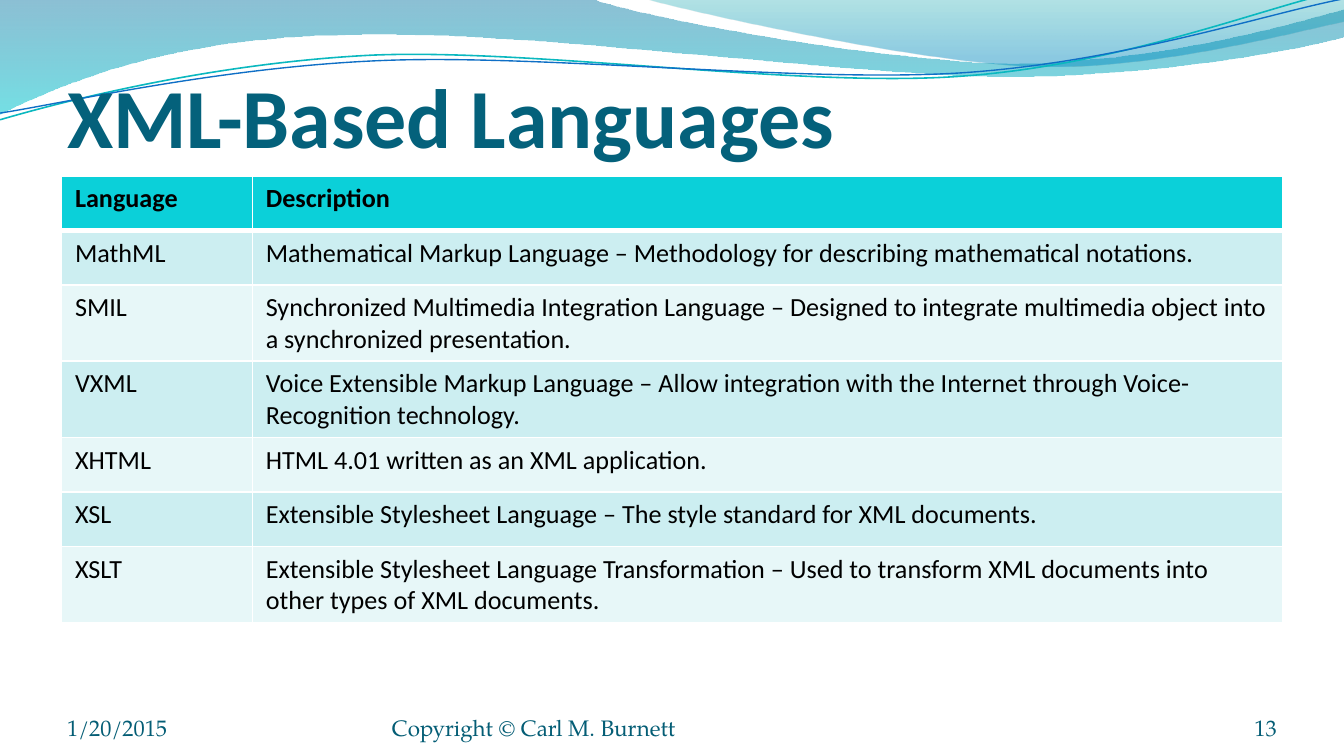
from lxml import etree
from pptx import Presentation
from pptx.dml import color
from pptx.enum import text
from pptx.oxml import ns
from pptx.util import Pt

RGB = color.RGBColor
WHITE = RGB(0xFF, 0xFF, 0xFF)
BLACK = RGB(0, 0, 0)
TITLE_TEAL = RGB(0x04, 0x61, 0x7B)
FOOTER_TEAL = RGB(0x04, 0x5D, 0x75)
HEADER_CYAN = RGB(0x0B, 0xD0, 0xD9)
ROW_FILLS = (RGB(0xCC, 0xEE, 0xF1), RGB(0xE7, 0xF7, 0xF8))
LINE_CYAN = RGB(0x0A, 0xB8, 0xBF)
LINE_BLUE = RGB(0x0F, 0x6F, 0xC6)

# Waves: a start point, then segments of one point (line) or three (Bezier curve)
# Gradient stops run from top to bottom: position, colour, opacity in percent
BANDS = [
    ([(0, 0), [(316.8, -0.7)],
      [(342.7, 9.4), (478.1, 33.8), (545.8, 33.8)],
      [(614.2, 33.8), (689.8, 13.7), (720, 5)],
      [(720.7, 19.4)],
      [(707.8, 23.8), (626.4, 41), (537.1, 41)],
      [(447.8, 40.3), (275, 15.1), (185, 18.7)],
      [(92.9, 19.4), (33.1, 44.6), (-0.7, 61.2)],
      [(0, 0)]],
     [(0, RGB(0x00, 0x74, 0xA1), 45), (1, RGB(0x00, 0xC6, 0xCF), 55)]),
    ([(344.9, -0.7),
      [(366.5, 5.8), (491, 33.1), (553.7, 35.3)],
      [(616.3, 37.4), (691.9, 17.3), (720, 11.5)],
      [(720, 0)],
      [(344.9, -0.7)]],
     [(0, RGB(0x00, 0xA1, 0xA9), 30), (0.8, RGB(0x00, 0x8B, 0xBF), 45)]),
]
LINE_ROTATION = 357.3
WAVE_LINES = [
    ([(-1.1, 47.2),
      [(33.9, 38.7), (114, 22.2), (199.7, 22)],
      [(285.5, 22.4), (425.4, 50), (511.9, 48.2)],
      [(599.3, 46.6), (677.1, 19.2), (719.9, 11.9)]], LINE_CYAN, 0.85),
    ([(-0.9, 43.6),
      [(33.1, 40), (118.2, 24.6), (204, 25.1)],
      [(290.5, 25.5), (429.1, 47.9), (515.7, 46.3)],
      [(601.6, 44.5), (679.8, 22.2), (721.1, 16.3)]], LINE_BLUE, 0.75),
]

LANGUAGES = [
    ("Language", "Description"),
    ("MathML", "Mathematical Markup Language – Methodology for describing "
               "mathematical notations."),
    ("SMIL", "Synchronized Multimedia Integration Language – Designed to "
             "integrate multimedia object into a synchronized presentation."),
    ("VXML", "Voice Extensible Markup Language – Allow integration with the "
             "Internet through Voice-Recognition technology."),
    ("XHTML", "HTML 4.01 written as an XML application."),
    ("XSL", "Extensible Stylesheet Language – The style standard for XML documents."),
    ("XSLT", "Extensible Stylesheet Language Transformation – Used to transform "
             "XML documents into other types of XML documents."),
]
COLUMN_WIDTHS = (102.2, 552)
ROW_HEIGHT = 29.2
TABLE_HEIGHT = 239.4


def add_wave(page, outline, close):
    start, *segments = outline
    corners = [(Pt(x), Pt(y)) for segment in segments for x, y in segment]
    builder = page.shapes.build_freeform(Pt(start[0]), Pt(start[1]))
    builder.add_line_segments(corners, close=close)
    wave = builder.convert_to_shape()
    wave.shadow.inherit = False
    # Turn each run of three points into one Bezier curve
    steps = iter(list(wave._element.iter(ns.qn("a:lnTo"))))
    for segment in segments:
        first, *others = [next(steps) for _ in segment]
        if others:
            first.tag = ns.qn("a:cubicBezTo")
        for step in others:
            first.append(step[0])
            step.getparent().remove(step)
    return wave


def add_band(page, outline, stops):
    band = add_wave(page, outline, True)
    band.line.fill.background()
    band.fill.gradient()
    band.fill.gradient_angle = 270
    for stop, (position, rgb, _) in zip(band.fill.gradient_stops, stops):
        stop.position = position
        stop.color.rgb = rgb
    tints = band._element.spPr.iter(ns.qn("a:srgbClr"))
    for tint, (_, _, opacity) in zip(tints, stops):
        etree.SubElement(tint, ns.qn("a:alpha"), val=str(opacity * 1000))


def add_wave_line(page, outline, rgb, width):
    wave = add_wave(page, outline, False)
    wave.rotation = LINE_ROTATION
    wave.fill.background()
    wave.line.color.rgb = rgb
    wave.line.width = Pt(width)


def format_text(frame, size, font, rgb, bold=False):
    for para in frame.paragraphs:
        for span in para.runs:
            span.font.size = Pt(size)
            span.font.name = font
            span.font.bold = bold
            span.font.color.rgb = rgb


def add_text(page, words, place, size, font, rgb, bold=False, top_inset=0,
             align=text.PP_ALIGN.LEFT):
    box = page.shapes.add_textbox(*map(Pt, place))
    frame = box.text_frame
    frame.word_wrap = True
    frame.vertical_anchor = text.MSO_ANCHOR.BOTTOM
    frame.margin_left = frame.margin_right = frame.margin_bottom = 0
    frame.margin_top = Pt(top_inset)
    frame.text = words
    frame.paragraphs[0].alignment = align
    format_text(frame, size, font, rgb, bold)


def set_borders(cell, widths):
    properties = cell._tc.get_or_add_tcPr()
    for index, (side, width) in enumerate(widths.items()):
        line = etree.Element(ns.qn(f"a:ln{side}"), w=str(Pt(width)))
        solid = etree.SubElement(line, ns.qn("a:solidFill"))
        etree.SubElement(solid, ns.qn("a:srgbClr"), val=str(WHITE))
        properties.insert(index, line)


def add_language_table(page):
    frame = page.shapes.add_table(len(LANGUAGES), len(COLUMN_WIDTHS), Pt(33), Pt(94.3),
                                  Pt(sum(COLUMN_WIDTHS)), Pt(TABLE_HEIGHT))
    table = frame.table
    for column, width in zip(table.columns, COLUMN_WIDTHS):
        column.width = Pt(width)
    for r, entry in enumerate(LANGUAGES):
        table.rows[r].height = Pt(ROW_HEIGHT)
        header = r == 0
        for c, words in enumerate(entry):
            cell = table.cell(r, c)
            cell.text_frame.text = words
            format_text(cell.text_frame, 14, "Calibri", BLACK, header)
            cell.fill.solid()
            cell.fill.fore_color.rgb = HEADER_CYAN if header else ROW_FILLS[(r - 1) % 2]
            set_borders(cell, {"L": 1, "R": 1, "T": 3 if r == 1 else 1,
                               "B": 3 if header else 1})
    frame.height = Pt(TABLE_HEIGHT)


def main():
    deck = Presentation()
    deck.slide_width, deck.slide_height = Pt(720), Pt(405)
    page = deck.slides.add_slide(deck.slide_layouts[6])

    # Wave decoration
    for outline, stops in BANDS:
        add_band(page, outline, stops)
    for outline, rgb, width in WAVE_LINES:
        add_wave_line(page, outline, rgb, width)

    # Title
    add_text(page, "XML-Based Languages", (36, 41.8, 648, 46.8), 45, "Calibri",
             TITLE_TEAL, bold=True, top_inset=3.6)

    # Footer
    for words, left, width, align in (
            ("1/20/2015", 36, 168, text.PP_ALIGN.LEFT),
            ("Copyright © Carl M. Burnett", 210, 264, text.PP_ALIGN.LEFT),
            ("13", 624, 60, text.PP_ALIGN.RIGHT)):
        add_text(page, words, (left, 375.4, width, 21.6), 12, "TeX Gyre Pagella",
                 FOOTER_TEAL, align=align)

    # Language table
    add_language_table(page)
    deck.save("out.pptx")


if __name__ == "__main__":
    main()
